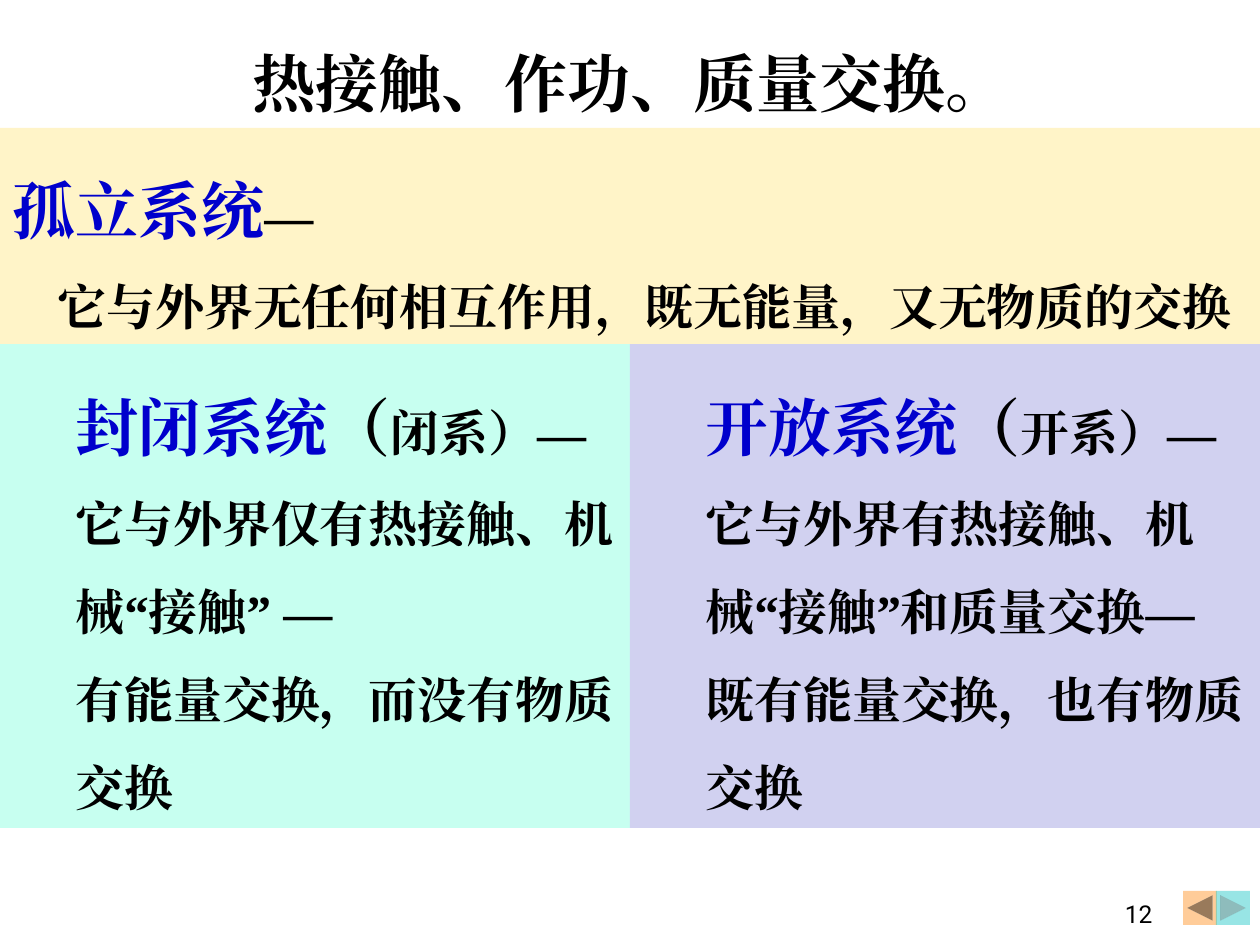
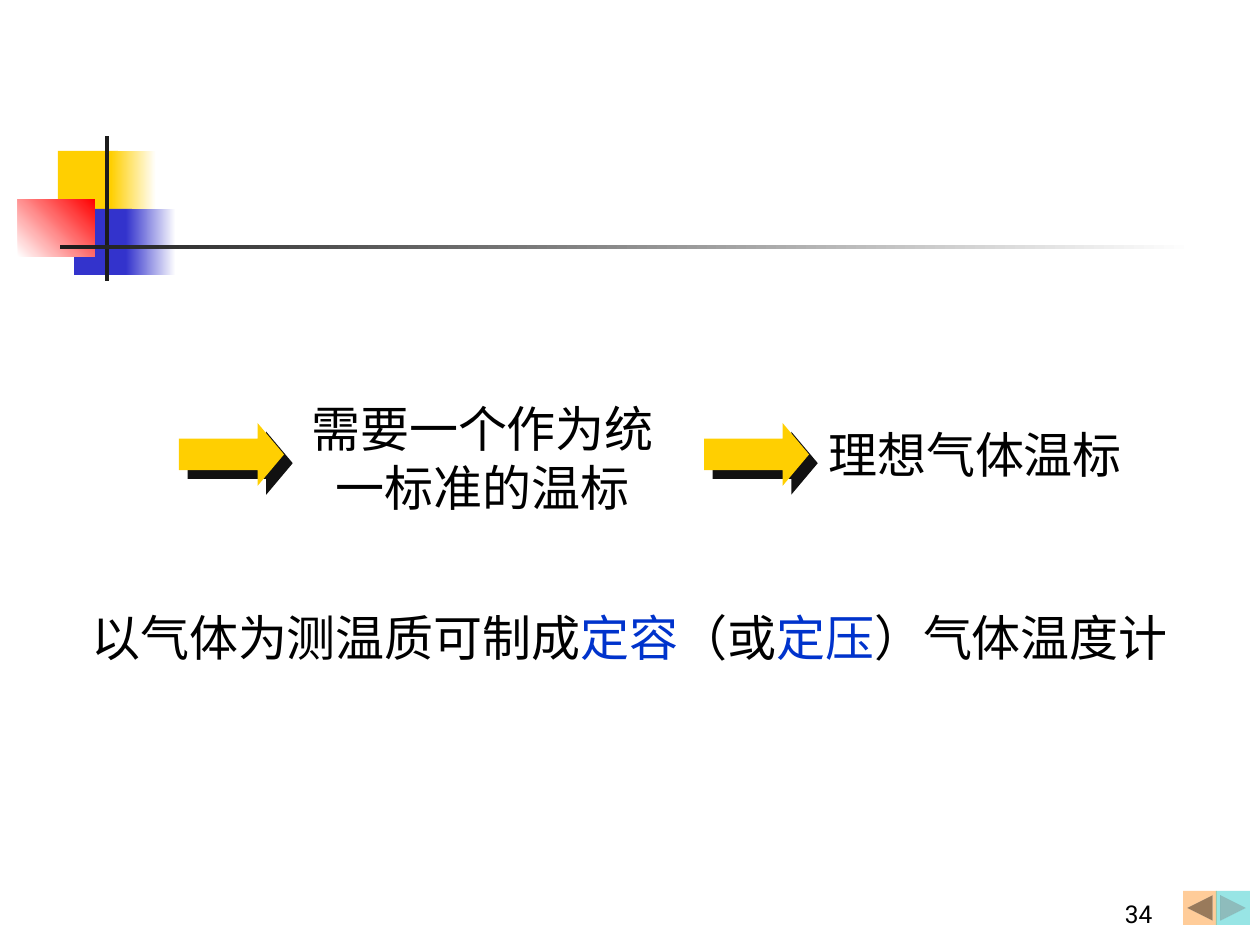
from dataclasses import dataclass

from lxml.etree import SubElement
from pptx import Presentation
from pptx.dml.color import RGBColor
from pptx.enum.shapes import MSO_SHAPE as SHAPE
from pptx.enum.text import MSO_ANCHOR as ANCHOR, MSO_AUTO_SIZE as AUTO, PP_ALIGN as ALIGN
from pptx.oxml.ns import qn
from pptx.util import Emu, Pt


@dataclass(frozen=True)
class Theme:
    black: str = "000000"
    white: str = "FFFFFF"
    term: str = "0000CC"
    accent: str = "0033CC"
    cream: str = "FFF4C8"
    mint: str = "C7FFF0"
    lilac: str = "D1D1F0"
    yellow: str = "FFCF01"
    blue: str = "3333CC"
    red: str = "FF0000"
    ink: str = "1C1C1C"
    shadow: str = "111111"
    back: str = "FFCC99"
    forward: str = "33CCCC"
    serif: str = "Times New Roman"
    sans: str = "Noto Sans CJK JP"
    number: str = "Roboto"
    large: int = 36
    medium: int = 28
    small: int = 14


T = Theme()
PX = 914400 / 126


def box(s, x, y, w, h, fill=None, kind=SHAPE.RECTANGLE, angle=0):
    x, y, w, h = (Emu(round(v * PX)) for v in (x, y, w, h))
    if fill is None:
        return s.shapes.add_textbox(x, y, w, h)
    sp = s.shapes.add_shape(kind, x, y, w, h)
    sp.shadow.inherit = False
    sp.line.fill.background()
    if isinstance(fill, tuple):
        sp.fill.gradient()
        sp.fill.gradient_angle = angle
        for stop, color in zip(sp.fill.gradient_stops, fill):
            stop.color.rgb = RGBColor.from_string(color)
    else:
        sp.fill.solid()
        sp.fill.fore_color.rgb = RGBColor.from_string(fill)
    return sp


def write(sp, lines, font=T.sans, size=T.medium, color=T.black, bold=False,
          align=ALIGN.LEFT, anchor=ANCHOR.TOP, spacing=1.0, indents=(0,), wrap=True):
    tf = sp.text_frame
    tf.word_wrap = wrap
    tf.auto_size = AUTO.NONE
    tf.vertical_anchor = anchor
    for i, line in enumerate(lines):
        p = tf.paragraphs[0] if i == 0 else tf.add_paragraph()
        p.alignment = align
        p.line_spacing = spacing
        p.space_before = Pt(0)
        pPr = p._p.get_or_add_pPr()
        pPr.set("marL", str(round(indents[min(i, len(indents) - 1)] * PX)))
        pPr.set("indent", "0")
        for text, look in line:
            r = p.add_run()
            r.text = text
            r.font.name = font
            r.font.size = Pt(look.get("size", size))
            r.font.bold = bold
            r.font.color.rgb = RGBColor.from_string(look.get("color", color))
            SubElement(r._r.get_or_add_rPr(), qn("a:ea"), typeface=font)


prs = Presentation()
prs.slide_width = Emu(round(1260 * PX))
prs.slide_height = Emu(round(945 * PX))
systems = prs.slides.add_slide(prs.slide_layouts[5])
scale = prs.slides.add_slide(prs.slide_layouts[6])

decor = [
    (58, 151, 60, 66, T.yellow, 0),
    (111, 151, 45, 66, (T.yellow, T.white), 0),
    (74, 209, 58, 66, T.blue, 0),
    (126, 209, 50, 66, (T.blue, T.white), 0),
    (18, 199, 77, 58, (T.white, T.red), 45),
    (105, 136, 4, 145, T.ink, 0),
    (60, 245, 1134, 4, (T.ink, T.white), 0),
]
for x, y, w, h, fill, angle in decor:
    box(scale, x, y, w, h, fill, angle=angle)

for s, number in ((systems, "12"), (scale, "34")):
    box(s, 1183, 891, 34, 34, T.back, SHAPE.ACTION_BUTTON_BACK_OR_PREVIOUS)
    sp = box(s, 1216, 891, 34, 34, T.forward, SHAPE.ACTION_BUTTON_FORWARD_OR_NEXT)
    SubElement(sp._element.spPr.find(".//" + qn("a:srgbClr")), qn("a:alpha"), val="50000")
    write(box(s, 903, 872, 262, 63), [[(number, {})]], font=T.number, size=T.small,
          align=ALIGN.RIGHT, anchor=ANCHOR.BOTTOM)

title = systems.shapes.title
title.left, title.top = Emu(0), Emu(0)
title.width, title.height = prs.slide_width, Emu(round(111 * PX))
write(title, [[("热接触、作功、质量交换。", {})]], font=T.serif, size=T.large,
      bold=True, align=ALIGN.CENTER, spacing=1.5)

term = {"size": T.large, "color": T.term}
bracket = {"size": T.large}
panels = [
    (0, 128, 1260, 217, T.cream, (0, 45), [
        [("孤立系统", term), ("—", {})],
        [("它与外界无任何相互作用，既无能量，又无物质的交换", {})],
    ]),
    (0, 344, 630, 484, T.mint, (63,), [
        [("封闭系统", term), ("（", bracket), ("闭系）—", {})],
        [("它与外界仅有热接触、机械“接触” —", {})],
        [("有能量交换，而没有物质交换", {})],
    ]),
    (630, 344, 630, 484, T.lilac, (63,), [
        [("开放系统", term), ("（", bracket), ("开系）—", {})],
        [("它与外界有热接触、机械“接触”和质量交换—", {})],
        [("既有能量交换，也有物质交换", {})],
    ]),
]
for x, y, w, h, fill, indents, lines in panels:
    write(box(systems, x, y, w, h, fill), lines, font=T.serif, bold=True,
          spacing=1.5, indents=indents)

write(box(scale, 220, 392, 462, 130),
      [[("需要一个作为统", {})], [("一标准的温标", {})]],
      align=ALIGN.CENTER, indents=(63,))

for x in (179, 704):
    arrow = box(scale, x, 423, 105, 63, T.yellow, SHAPE.RIGHT_ARROW)
    arrow.adjustments[0], arrow.adjustments[1] = 0.5, 0.42
    effects = arrow._element.spPr.find(qn("a:effectLst"))
    shadow = SubElement(effects, qn("a:outerShdw"), dist=str(Pt(7.1)), dir="2700000",
                        algn="ctr", rotWithShape="0")
    SubElement(shadow, qn("a:srgbClr"), val=T.shadow)

write(box(scale, 813, 418, 324, 72), [[("理想气体温标", {})]],
      align=ALIGN.CENTER, anchor=ANCHOR.MIDDLE, wrap=False)

accent = {"color": T.accent}
write(box(scale, 63, 601, 1133, 72, T.white),
      [[("以气体为测温质可制成", {}), ("定容", accent), ("（或", {}),
        ("定压", accent), ("）气体温度计", {})]],
      align=ALIGN.CENTER, anchor=ANCHOR.MIDDLE)

prs.save("out.pptx")
